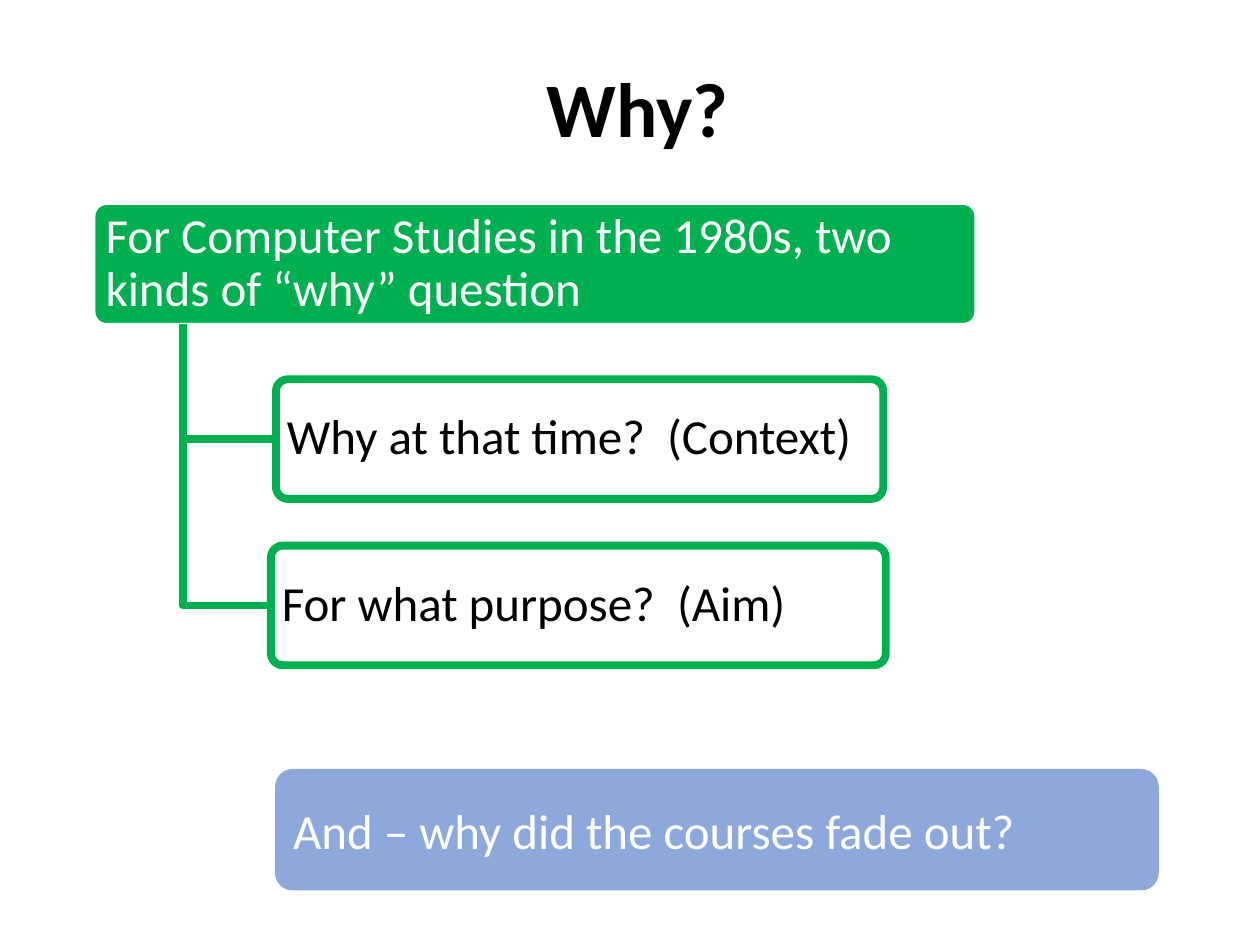
from pptx import Presentation
from pptx import util as u
from pptx.dml.color import RGBColor
from pptx.enum import shapes, text

GREEN, BLUE, WHITE, BLACK = "00B050", "8DA9DB", "FFFFFF", "000000"
BOX_HEIGHT = 0.95
TRUNK_X, TRUNK_TOP = 1.45, 2.57


def color(value):
    return RGBColor.from_string(value)


def set_text(sp, words, size, ink, inset=(0.1, 0.05), spacing=0.9,
             align=text.PP_ALIGN.LEFT, bold=False):
    tf = sp.text_frame
    tf.word_wrap = True
    tf.vertical_anchor = text.MSO_ANCHOR.MIDDLE
    tf.margin_left = tf.margin_right = u.Inches(inset[0])
    tf.margin_top = tf.margin_bottom = u.Inches(inset[1])
    p = tf.paragraphs[0]
    p.text = words
    p.alignment = align
    p.line_spacing = spacing
    p.font.name = "Calibri"
    p.font.size = u.Pt(size)
    p.font.bold = bold
    p.font.color.rgb = color(ink)


def add_title(s, words):
    sp = s.shapes.add_textbox(*map(u.Inches, (0.75, 0.17, 8.62, 1.45)))
    set_text(sp, words, 44, BLACK, align=text.PP_ALIGN.CENTER, bold=True)


def add_box(s, words, left, top, width, fill, line, weight, ink,
            corner=0.1, inset=(0.06, 0.04), spacing=0.9):
    sp = s.shapes.add_shape(shapes.MSO_SHAPE.ROUNDED_RECTANGLE,
                            *map(u.Inches, (left, top, width, BOX_HEIGHT)))
    sp.adjustments[0] = corner
    sp.shadow.inherit = False
    sp.fill.solid()
    sp.fill.fore_color.rgb = color(fill)
    sp.line.color.rgb = color(line)
    sp.line.width = u.Pt(weight)
    set_text(sp, words, 28, ink, inset, spacing)


def add_branch(s, right, bottom):
    x, y = u.Inches(TRUNK_X), u.Inches(bottom)
    builder = s.shapes.build_freeform(x, u.Inches(TRUNK_TOP))
    builder.add_line_segments([(x, y), (u.Inches(right), y)], close=False)
    sp = builder.convert_to_shape()
    sp.shadow.inherit = False
    sp.fill.background()
    sp.line.color.rgb = color(GREEN)
    sp.line.width = u.Pt(4.5)


def main():
    prs = Presentation()
    prs.slide_width, prs.slide_height = u.Inches(10), u.Inches(7.5)
    s = prs.slides.add_slide(prs.slide_layouts[6])
    add_title(s, "Why?")
    add_box(s, "For Computer Studies in the 1980s, two kinds of “why” question",
            0.75, 1.62, 6.99, GREEN, WHITE, 1, WHITE)
    questions = [
        ("Why at that time?  (Context)", 2.19, 3.01, 4.82),
        ("For what purpose?  (Aim)", 2.15, 4.33, 4.88),
    ]
    for words, left, top, width in questions:
        add_branch(s, left, top + BOX_HEIGHT / 2)
        add_box(s, words, left, top, width, WHITE, GREEN, 4.5, BLACK)
    add_box(s, "And – why did the courses fade out?", 2.19, 6.11, 7,
            BLUE, BLUE, 1, WHITE, corner=0.14, inset=(0.1, 0.05), spacing=1.0)
    prs.save("out.pptx")


if __name__ == "__main__":
    main()
